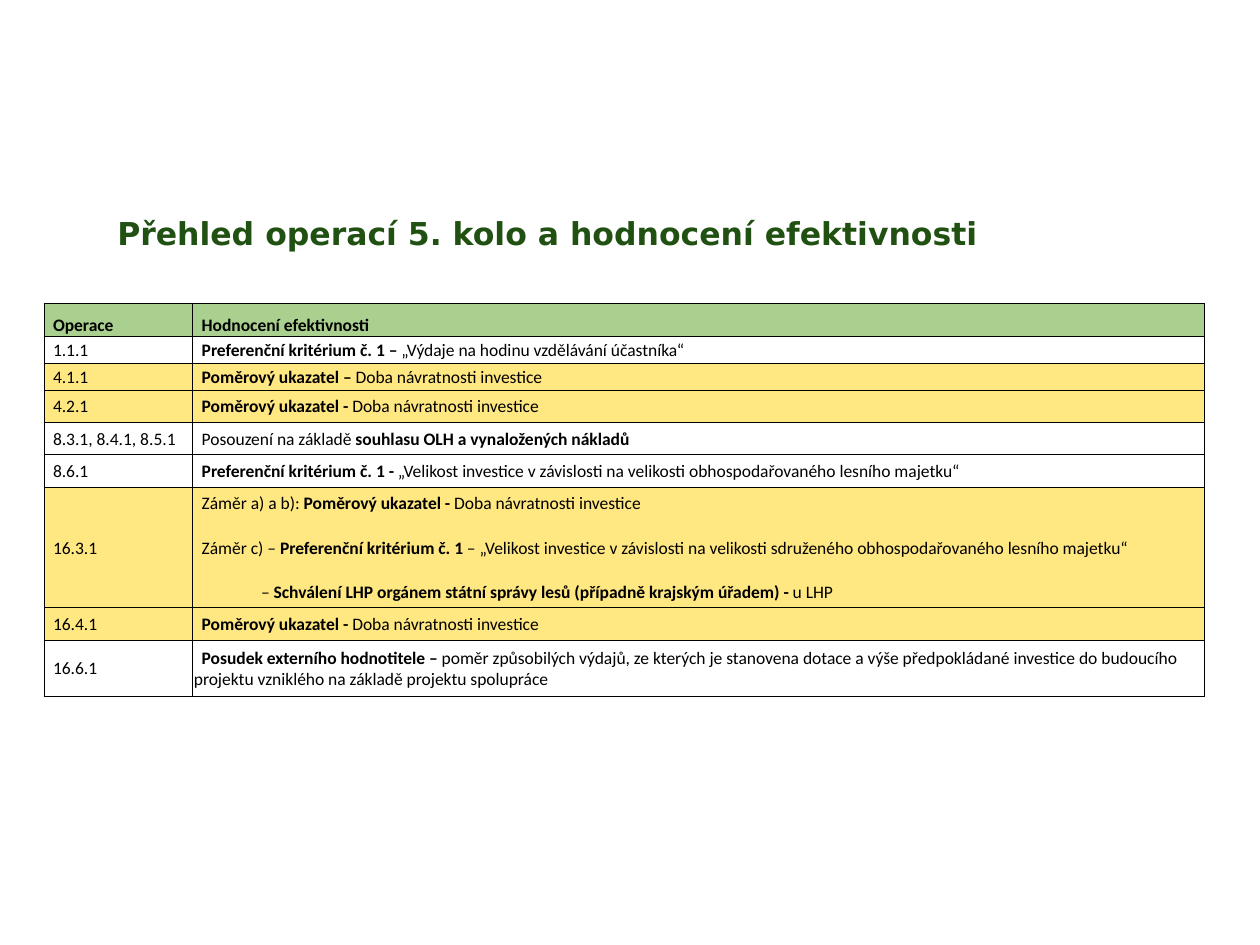
"""Build a slide with a table of operations and how their efficiency is assessed."""
import lxml.etree
import pptx
import pptx.dml.color
import pptx.enum.text
import pptx.oxml.ns
import pptx.util

Pt = pptx.util.Pt
ANCHOR = pptx.enum.text.MSO_ANCHOR

COLORS = {"title": "215112", "text": "000000", "border": "000000",
          "header": "A9D08E", "ratio": "FFE781"}
TITLE = "Přehled operací 5. kolo a hodnocení efektivnosti"
PAYBACK = ("Doba návratnosti investice", False)
RATIO = ("Poměrový ukazatel - ", True)

ROWS = [
    ("Operace", [("Hodnocení efektivnosti", True)], "header", 18.5),
    ("1.1.1", [("Preferenční kritérium č. 1 – ", True),
               ("„Výdaje na hodinu vzdělávání účastníka“", False)], None, 15.5),
    ("4.1.1", [("Poměrový ukazatel – ", True), PAYBACK], "ratio", 15.5),
    ("4.2.1", [RATIO, PAYBACK], "ratio", 18.5),
    ("8.3.1, 8.4.1, 8.5.1", [("Posouzení na základě", False),
                             (" souhlasu OLH a vynaložených nákladů", True)], None, 18.5),
    ("8.6.1", [("Preferenční kritérium č. 1 - ", True),
               ("„Velikost investice v závislosti na velikosti "
                "obhospodařovaného lesního majetku“", False)], None, 18.5),
    ("16.3.1", [("Záměr a) a b): ", False), RATIO, PAYBACK], "ratio", 18.5),
    ("", [("Záměr c) – ", False), ("Preferenční kritérium č. 1 ", True),
          ("– „Velikost investice v závislosti na velikosti sdruženého "
           "obhospodařovaného lesního majetku“", False)], "ratio", 32),
    ("", [("– ", False),
          ("Schválení LHP orgánem státní správy lesů (případně krajským úřadem) - ", True),
          ("u LHP", False)], "ratio", 18.5),
    ("16.4.1", [RATIO, PAYBACK], "ratio", 18.5),
    ("16.6.1", [("Posudek externího hodnotitele – ", True),
                ("poměr způsobilých výdajů, ze kterých je stanovena dotace a výše "
                 "předpokládané investice do budoucího projektu vzniklého na základě "
                 "projektu spolupráce", False)], None, 32),
]
COLUMN_WIDTHS = [85, 578]
MERGED_FIRST, MERGED_LAST = 6, 8
INDENT, DEEP_INDENT = 4.5, 38.4


def write(frame, runs, size=10, font="Calibri", color="text", indent=0):
    para = frame.paragraphs[0]
    para.alignment = pptx.enum.text.PP_ALIGN.LEFT
    properties = para._p.get_or_add_pPr()
    properties.set("marL", "0")
    properties.set("indent", str(int(Pt(indent))))
    for text, bold in runs:
        span = para.add_run()
        span.text = text
        span.font.size = Pt(size)
        span.font.name = font
        span.font.bold = bold
        span.font.color.rgb = pptx.dml.color.RGBColor.from_string(COLORS[color])


def draw_borders(cell, hidden):
    qn = pptx.oxml.ns.qn
    properties = cell._tc.get_or_add_tcPr()
    for side in "LRTB":
        line = lxml.etree.SubElement(properties, qn("a:ln" + side), w=str(int(Pt(0.5))))
        if side in hidden:
            lxml.etree.SubElement(line, qn("a:noFill"))
        else:
            fill = lxml.etree.SubElement(line, qn("a:solidFill"))
            lxml.etree.SubElement(fill, qn("a:srgbClr"), val=COLORS["border"])


def add_title(page):
    title = page.shapes.title
    title.left, title.top, title.width, title.height = Pt(57), Pt(115), Pt(513), Pt(35.5)
    frame = title.text_frame
    frame.margin_left = frame.margin_right = Pt(10)
    frame.margin_top = frame.margin_bottom = Pt(6.5)
    frame.vertical_anchor = ANCHOR.BOTTOM
    frame.word_wrap = False
    frame.auto_size = pptx.enum.text.MSO_AUTO_SIZE.SHAPE_TO_FIT_TEXT
    write(frame, [(TITLE, True)], size=18, font="DejaVu Sans", color="title")


def add_operations(page):
    height = sum(row[3] for row in ROWS)
    table = page.shapes.add_table(len(ROWS), len(COLUMN_WIDTHS), Pt(25.2), Pt(173.5),
                                  Pt(sum(COLUMN_WIDTHS)), Pt(height)).table
    table.first_row = table.horz_banding = False
    for column, width in zip(table.columns, COLUMN_WIDTHS):
        column.width = Pt(width)
    for index, (operation, assessment, fill, row_height) in enumerate(ROWS):
        table.rows[index].height = Pt(row_height)
        hidden = ("T" if MERGED_FIRST < index <= MERGED_LAST else "") + (
            "B" if MERGED_FIRST <= index < MERGED_LAST else "")
        indent = DEEP_INDENT if index == MERGED_LAST else INDENT
        contents = [([(operation, index == 0)] if operation else [], INDENT),
                    (assessment, indent)]
        for number, (runs, start) in enumerate(contents):
            cell = table.cell(index, number)
            cell.margin_left = cell.margin_right = cell.margin_top = Pt(0.6)
            cell.margin_bottom = 0
            cell.vertical_anchor = ANCHOR.MIDDLE if index else ANCHOR.BOTTOM
            draw_borders(cell, hidden)
            if fill:
                cell.fill.solid()
                cell.fill.fore_color.rgb = pptx.dml.color.RGBColor.from_string(COLORS[fill])
            else:
                cell.fill.background()
            write(cell.text_frame, runs, indent=start)
    table.cell(MERGED_FIRST, 0).merge(table.cell(MERGED_LAST, 0))


def main():
    deck = pptx.Presentation()
    deck.slide_width, deck.slide_height = Pt(720), Pt(540)
    page = deck.slides.add_slide(deck.slide_layouts[5])
    add_title(page)
    add_operations(page)
    deck.save("out.pptx")


if __name__ == "__main__":
    main()
